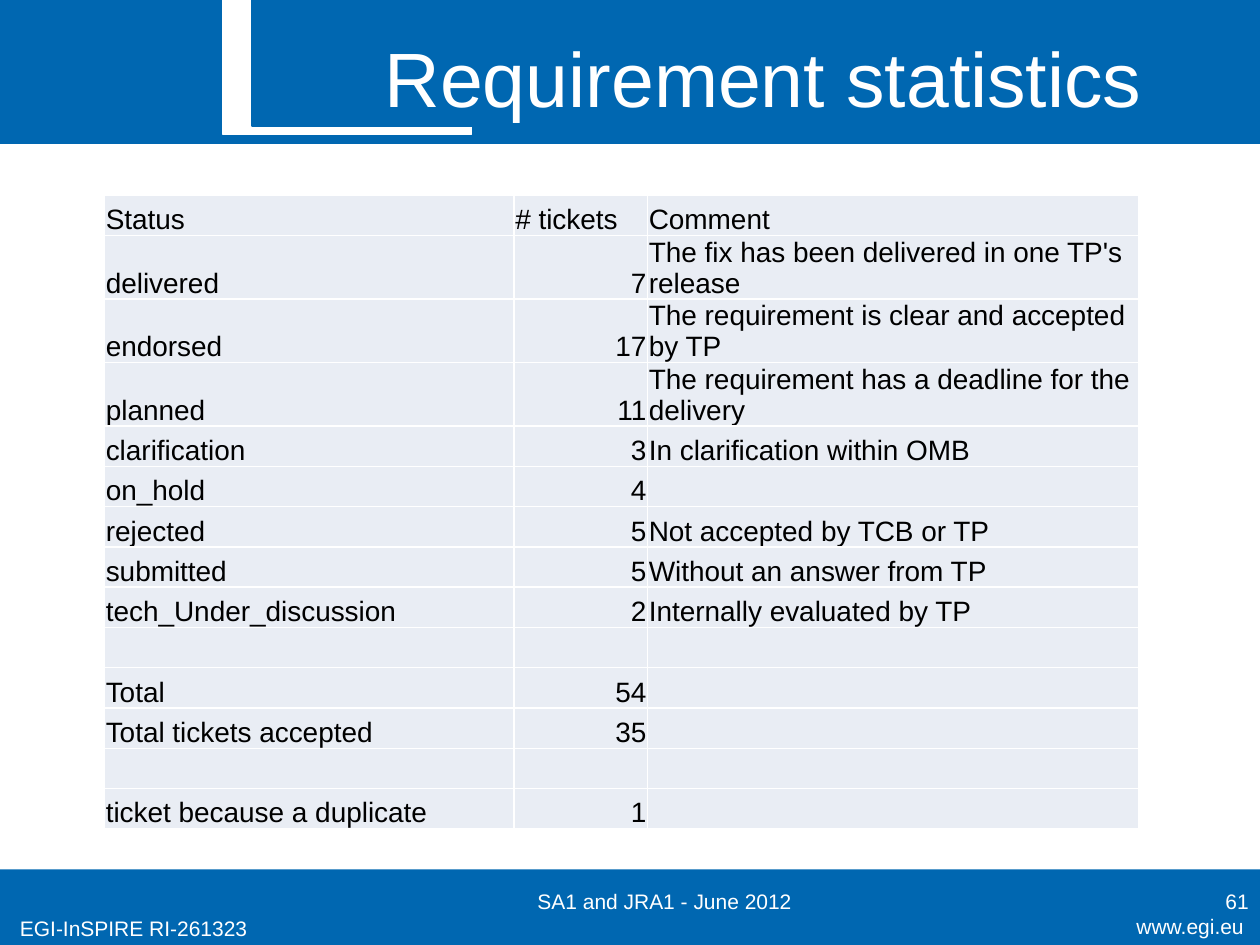
"""Build the requirement statistics slide with its banner, ticket table and footer."""
from dataclasses import dataclass

from lxml import etree
from pptx import Presentation
from pptx import util as u
from pptx.dml.color import RGBColor
from pptx.enum import shapes, text
from pptx.oxml.ns import qn


@dataclass(frozen=True)
class Theme:
    font: str = "Arial"
    blue: str = "0067B1"
    white: str = "FFFFFF"
    black: str = "000000"
    cell: str = "E9EDF4"
    title: int = 44
    table: int = 16
    footer: int = 12
    thin: float = 0.75


THEME = Theme()
WIDTH, HEIGHT = 10, 7.5
LEFT, CENTER, RIGHT = text.PP_ALIGN.LEFT, text.PP_ALIGN.CENTER, text.PP_ALIGN.RIGHT
TOP, MIDDLE, BOTTOM = (text.MSO_ANCHOR.TOP, text.MSO_ANCHOR.MIDDLE,
                       text.MSO_ANCHOR.BOTTOM)

TITLE = "Requirement statistics"
TITLE_AREA = (2.32, 0.13, 7.48, 0.95)
ROWS = [
    ("Status", "# tickets", "Comment"),
    ("delivered", "7", "The fix has been delivered in one TP's release"),
    ("endorsed", "17", "The requirement is clear and accepted by TP"),
    ("planned", "11", "The requirement has a deadline for the delivery"),
    ("clarification", "3", "In clarification within OMB"),
    ("on_hold", "4", ""),
    ("rejected", "5", "Not accepted by TCB or TP"),
    ("submitted", "5", "Without an answer from TP"),
    ("tech_Under_discussion", "2", "Internally evaluated by TP"),
    ("", "", ""),
    ("Total", "54", ""),
    ("Total tickets accepted", "35", ""),
    ("", "", ""),
    ("ticket because a duplicate", "1", ""),
]
TABLE_ORIGIN = (0.83, 1.55)
COLUMNS = (3.25, 1.06, 3.9)
ROW_HEIGHT = 0.32
FOOTERS = [
    ("www.egi.eu", (8.39, 7.2, 1.58, 0.31), RIGHT, TOP),
    ("EGI-InSPIRE RI-261323", (0.06, 7.22, 2.5, 0.31), LEFT, TOP),
    ("61", (7.68, 6.95, 2.33, 0.4), RIGHT, MIDDLE),
    ("SA1 and JRA1 - June 2012", (3.42, 6.95, 3.71, 0.4), CENTER, MIDDLE),
]
BANNER_HEIGHT, FOOTER_HEIGHT = 1.14, 0.6
CURVE_LEFT, CURVE_RIGHT, CURVE_DEPTH = 1.77, 3.74, 1.07
CURVE_TOP = 2.56
CURVE_STEPS = 40


def inches(values):
    return [u.Inches(value) for value in values]


def write(paragraph, words, size, color, align):
    paragraph.alignment = align
    span = paragraph.add_run()
    span.text = words
    span.font.name = THEME.font
    span.font.size = u.Pt(size)
    span.font.color.rgb = RGBColor.from_string(color)


def paint(shape, color, outlined=True):
    shape.shadow.inherit = False
    shape.fill.solid()
    shape.fill.fore_color.rgb = RGBColor.from_string(color)
    if outlined:
        shape.line.color.rgb = RGBColor.from_string(color)
        shape.line.width = u.Pt(THEME.thin)
    else:
        shape.line.fill.background()


def add_band(page, area, color, outlined=True):
    band = page.shapes.add_shape(shapes.MSO_SHAPE.RECTANGLE, *inches(area))
    paint(band, color, outlined)


def bezier(start, first, second, end, share):
    rest = 1 - share
    return (rest ** 3 * start + 3 * rest ** 2 * share * first
            + 3 * rest * share ** 2 * second + share ** 3 * end)


def add_banner(page):
    add_band(page, (0, 0, WIDTH, BANNER_HEIGHT), THEME.blue)
    add_band(page, (CURVE_LEFT, 0, CURVE_RIGHT - CURVE_LEFT, CURVE_DEPTH), THEME.white)
    shares = [step / CURVE_STEPS for step in range(CURVE_STEPS + 1)]
    curve = [(bezier(CURVE_LEFT, CURVE_TOP, CURVE_LEFT, CURVE_TOP, share),
              bezier(CURVE_DEPTH, CURVE_DEPTH, 0, 0, share)) for share in shares]
    outline = page.shapes.build_freeform(CURVE_RIGHT, 0, scale=float(u.Inches(1)))
    outline.add_line_segments([(CURVE_RIGHT, CURVE_DEPTH), *curve], close=True)
    paint(outline.convert_to_shape(), THEME.blue)


def place_title(page):
    title = page.shapes.title
    title.left, title.top, title.width, title.height = inches(TITLE_AREA)
    title.text_frame.vertical_anchor = MIDDLE
    write(title.text_frame.paragraphs[0], TITLE, THEME.title, THEME.white, CENTER)
    page.shapes._spTree.append(title._element)


def style_cell(cell):
    cell.vertical_anchor = BOTTOM
    cell.margin_left = cell.margin_right = cell.margin_top = u.Inches(0.01)
    cell.margin_bottom = 0
    properties = cell._tc.get_or_add_tcPr()
    for side in ("a:lnL", "a:lnR", "a:lnT", "a:lnB"):
        border = etree.SubElement(properties, qn(side), w=str(u.Pt(1)))
        fill = etree.SubElement(border, qn("a:solidFill"))
        etree.SubElement(fill, qn("a:srgbClr"), val=THEME.white)
    cell.fill.solid()
    cell.fill.fore_color.rgb = RGBColor.from_string(THEME.cell)


def add_ticket_table(page):
    size = (sum(COLUMNS), ROW_HEIGHT * len(ROWS))
    frame = page.shapes.add_table(len(ROWS), len(COLUMNS),
                                  *inches(TABLE_ORIGIN + size))
    table = frame.table
    table.first_row = table.horz_banding = False
    for column, width in zip(table.columns, COLUMNS):
        column.width = u.Inches(width)
    for row_index, values in enumerate(ROWS):
        table.rows[row_index].height = u.Inches(ROW_HEIGHT)
        for column_index, words in enumerate(values):
            cell = table.cell(row_index, column_index)
            style_cell(cell)
            paragraph = cell.text_frame.paragraphs[0]
            if words:
                align = RIGHT if words.isdigit() else LEFT
                write(paragraph, words, THEME.table, THEME.black, align)
            else:
                etree.SubElement(paragraph._p, qn("a:endParaRPr"),
                                 sz=str(THEME.table * 100))


def add_footer(page, words, area, align, anchor):
    box = page.shapes.add_textbox(*inches(area))
    box.text_frame.word_wrap = True
    box.text_frame.vertical_anchor = anchor
    write(box.text_frame.paragraphs[0], words, THEME.footer, THEME.white, align)


def main():
    deck = Presentation()
    deck.slide_width, deck.slide_height = inches((WIDTH, HEIGHT))
    page = deck.slides.add_slide(deck.slide_layouts.get_by_name("Title Only"))
    add_band(page, (0, HEIGHT - FOOTER_HEIGHT, WIDTH, FOOTER_HEIGHT), THEME.blue, False)
    add_banner(page)
    place_title(page)
    add_ticket_table(page)
    for footer in FOOTERS:
        add_footer(page, *footer)
    deck.save("out.pptx")


if __name__ == "__main__":
    main()
